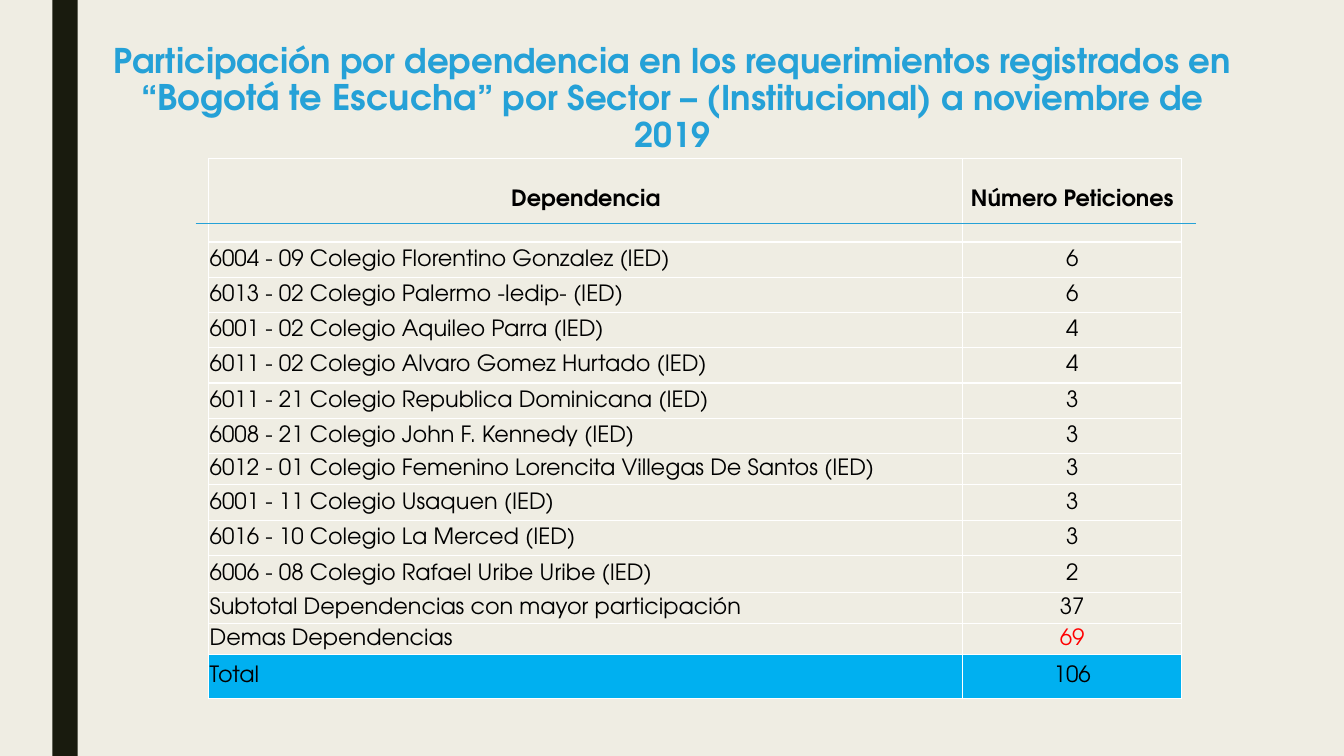
"""Builds the slide on petitions by school for the institutional sector."""
from lxml import etree
from pptx import Presentation
from pptx.dml.color import RGBColor
from pptx.enum.shapes import MSO_CONNECTOR, MSO_SHAPE
from pptx.enum.text import MSO_ANCHOR, PP_ALIGN
from pptx.oxml.ns import qn
from pptx.util import Inches, Pt

TITLE = [
    ("Participación por dependencia en los requerimientos registrados en “", 24.3),
    ("Bogotá te Escucha", 25.2),
    ("” por Sector – (Institucional) a noviembre de 2019", 24.3),
]
ROWS = [
    ("Dependencia", "Número Peticiones", 0.83),
    ("6004 - 09 Colegio Florentino Gonzalez (IED)", "6", 0.35),
    ("6013 - 02 Colegio Palermo -Iedip- (IED)", "6", 0.35),
    ("6001 - 02 Colegio Aquileo Parra (IED)", "4", 0.35),
    ("6011 - 02 Colegio Alvaro Gomez Hurtado (IED)", "4", 0.35),
    ("6011 - 21 Colegio Republica Dominicana (IED)", "3", 0.35),
    ("6008 - 21 Colegio John F. Kennedy (IED)", "3", 0.35),
    ("6012 - 01 Colegio Femenino Lorencita Villegas De Santos (IED)", "3", 0.31),
    ("6001 - 11 Colegio Usaquen (IED)", "3", 0.35),
    ("6016 - 10 Colegio La Merced (IED)", "3", 0.35),
    ("6006 - 08 Colegio Rafael Uribe Uribe (IED)", "2", 0.37),
    ("Subtotal Dependencias con mayor participación", "37", 0.31),
    ("Demas Dependencias", "69", 0.30),
    ("Total", "106", 0.44),
]
COLUMN_WIDTHS = (7.48, 2.17)
HEADER_ROW, OTHERS_ROW, TOTAL_ROW = 0, len(ROWS) - 2, len(ROWS) - 1

FONT = "TeX Gyre Adventor"
CREAM = RGBColor(0xEF, 0xED, 0xE3)
DARK = RGBColor(0x19, 0x1B, 0x0E)
BLUE = RGBColor(0x25, 0xA1, 0xD7)
CYAN = RGBColor(0x00, 0xB0, 0xF0)
BLACK = RGBColor(0x00, 0x00, 0x00)
RED = RGBColor(0xFF, 0x00, 0x00)
WHITE = RGBColor(0xFF, 0xFF, 0xFF)
LEFT, CENTER = PP_ALIGN.LEFT, PP_ALIGN.CENTER
TOP, MIDDLE = MSO_ANCHOR.TOP, MSO_ANCHOR.MIDDLE
RECTANGLE, STRAIGHT = MSO_SHAPE.RECTANGLE, MSO_CONNECTOR.STRAIGHT


def add_borders(cell, color):
    """Draws a one-point line on the four sides of a cell."""
    properties = cell._tc.get_or_add_tcPr()
    for position, side in enumerate(("a:lnL", "a:lnR", "a:lnT", "a:lnB")):
        border = etree.Element(qn(side), w=str(Pt(1)))
        fill = etree.SubElement(border, qn("a:solidFill"))
        etree.SubElement(fill, qn("a:srgbClr"), val=str(color))
        properties.insert(position, border)


def add_title(slide):
    """Adds the centred heading."""
    title = slide.shapes.add_textbox(Inches(0.92), Inches(0.39), Inches(11.5), Inches(0.63))
    frame = title.text_frame
    frame.word_wrap = True
    frame.vertical_anchor = TOP
    paragraph = frame.paragraphs[0]
    paragraph.alignment = CENTER
    paragraph.line_spacing = 0.89
    paragraph.font.name = FONT
    paragraph.font.bold = True
    paragraph.font.color.rgb = BLUE
    for text, size in TITLE:
        run = paragraph.add_run()
        run.text = text
        run.font.size = Pt(size)


def fill_cell(cell, text, row, column):
    """Writes and formats one table cell."""
    cell.text = text
    cell.vertical_anchor = MIDDLE
    cell.margin_left = cell.margin_right = cell.margin_top = Inches(0.01)
    cell.margin_bottom = 0
    paragraph = cell.text_frame.paragraphs[0]
    paragraph.alignment = LEFT if column == 0 and row != HEADER_ROW else CENTER
    paragraph.font.name = FONT
    paragraph.font.size = Pt(16)
    paragraph.font.bold = row == HEADER_ROW
    paragraph.font.color.rgb = RED if (row, column) == (OTHERS_ROW, 1) else BLACK
    if row == TOTAL_ROW:
        cell.fill.solid()
        cell.fill.fore_color.rgb = CYAN
    else:
        cell.fill.background()
    add_borders(cell, WHITE)


def add_petitions(slide):
    """Adds the table of petitions."""
    heights = [height for _, _, height in ROWS]
    petitions = slide.shapes.add_table(
        len(ROWS), len(COLUMN_WIDTHS), Inches(2.07), Inches(1.57),
        Inches(sum(COLUMN_WIDTHS)), Inches(sum(heights))).table
    petitions.first_row = petitions.horz_banding = False
    for column, width in enumerate(COLUMN_WIDTHS):
        petitions.columns[column].width = Inches(width)
    for row, (department, count, height) in enumerate(ROWS):
        petitions.rows[row].height = Inches(height)
        for column, text in enumerate((department, count)):
            fill_cell(petitions.cell(row, column), text, row, column)


def main():
    """Builds and saves the slide."""
    deck = Presentation()
    deck.slide_width, deck.slide_height = Inches(13.33), Inches(7.5)
    slide = deck.slides.add_slide(deck.slide_layouts[6])
    slide.background.fill.solid()
    slide.background.fill.fore_color.rgb = CREAM

    side_band = slide.shapes.add_shape(RECTANGLE, Inches(0.52), 0, Inches(0.25), Inches(7.5))
    side_band.shadow.inherit = False
    side_band.fill.solid()
    side_band.fill.fore_color.rgb = DARK
    side_band.line.fill.background()

    add_title(slide)
    add_petitions(slide)

    header_rule = slide.shapes.add_connector(
        STRAIGHT, Inches(1.94), Inches(2.22), Inches(11.86), Inches(2.22))
    header_rule.line.color.rgb = BLUE
    header_rule.line.width = Pt(0.5)
    etree.SubElement(header_rule._element.spPr, qn("a:effectLst"))

    deck.save("out.pptx")


if __name__ == "__main__":
    main()
